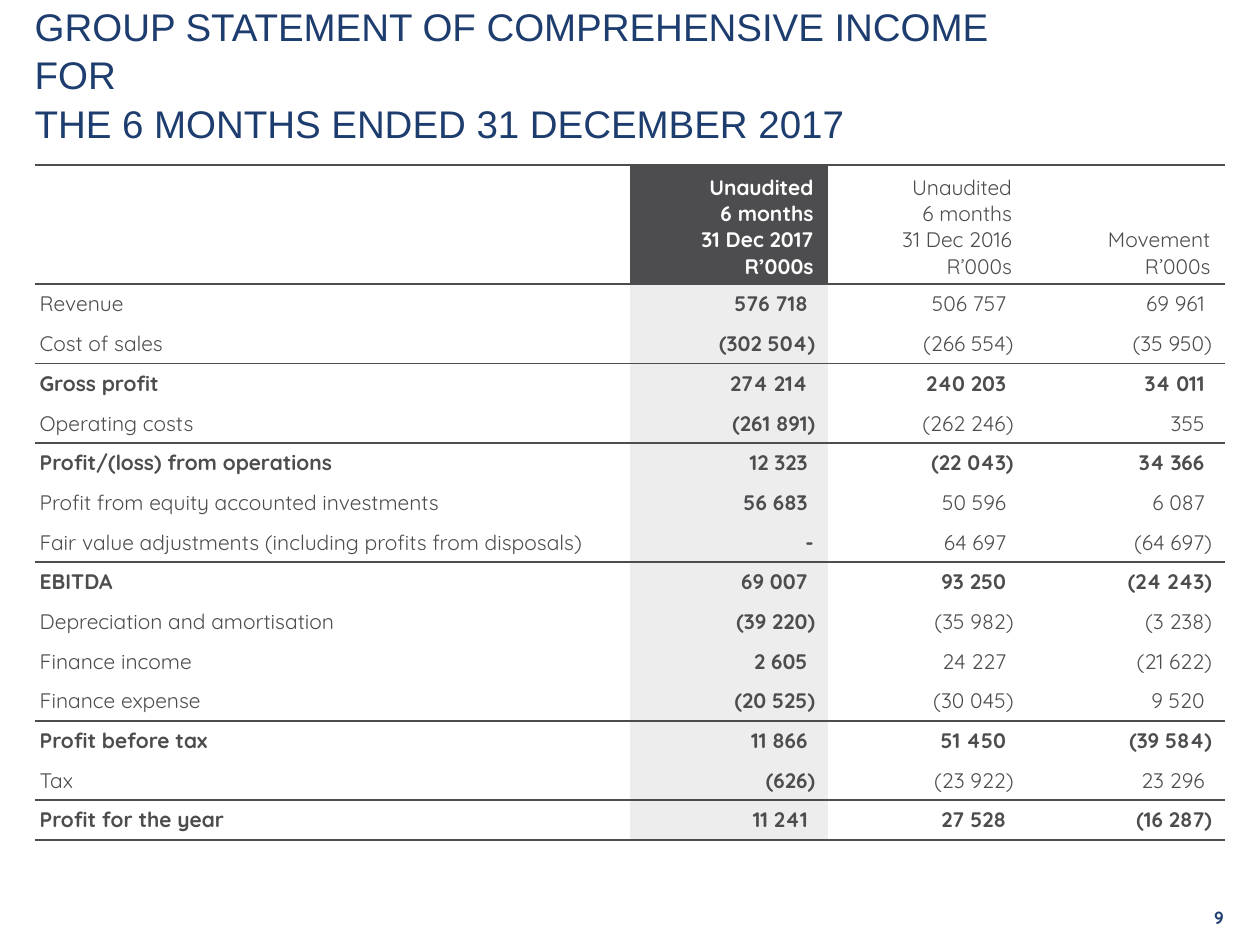
from lxml.etree import SubElement as Sub
from pptx import Presentation
from pptx.dml.color import RGBColor as RGB
from pptx.enum.text import MSO_ANCHOR as Anchor, MSO_AUTO_SIZE as Auto, PP_ALIGN as Align
from pptx.oxml.ns import qn
from pptx.util import Cm, Pt

NAVY = RGB(0x1D, 0x3D, 0x6F)
DARK = RGB(0x4D, 0x4D, 0x4F)
PALE = RGB(0xED, 0xED, 0xEE)
WHITE = RGB(0xFF, 0xFF, 0xFF)
PLAIN = "{2D5ABB26-0587-4C30-8999-92F81FD0307C}"  # no style, no grid

TITLE = ("GROUP STATEMENT OF COMPREHENSIVE INCOME FOR\v"
         "THE 6 MONTHS ENDED 31 DECEMBER 2017")
HEADS = ["",
         "Unaudited\v6 months\n31 Dec 2017\nR’000s",
         "Unaudited\v6 months\n31 Dec 2016\nR’000s",
         "Movement\nR’000s"]
ROWS = [
    ("Revenue", "576 718", "506 757", "69 961"),
    ("Cost of sales", "(302 504)", "(266 554)", "(35 950)"),
    ("Gross profit", "274 214", "240 203", "34 011"),
    ("Operating costs", "(261 891)", "(262 246)", "355"),
    ("Profit/(loss) from operations", "12 323", "(22 043)", "34 366"),
    ("Profit from equity accounted investments", "56 683", "50 596", "6 087"),
    ("Fair value adjustments (including profits from disposals)",
     "-", "64 697", "(64 697)"),
    ("EBITDA", "69 007", "93 250", "(24 243)"),
    ("Depreciation and amortisation", "(39 220)", "(35 982)", "(3 238)"),
    ("Finance income", "2 605", "24 227", "(21 622)"),
    ("Finance expense", "(20 525)", "(30 045)", "9 520"),
    ("Profit before tax", "11 866", "51 450", "(39 584)"),
    ("Tax", "(626)", "(23 922)", "23 296"),
    ("Profit for the year", "11 241", "27 528", "(16 287)"),
]
TOTALS = {"Gross profit", "Profit/(loss) from operations", "EBITDA",
          "Profit before tax", "Profit for the year"}


def write(frame, text, font="Quicksand", size=12, color=DARK, bold=False,
          align=Align.LEFT, space=None):
    """Fill a text frame; each line of text is a paragraph."""
    frame.text = text
    for para in frame.paragraphs:
        para.alignment = align
        para.line_spacing = space
        for run in para.runs:
            style = run.font
            style.name, style.size, style.bold = font, Pt(size), bold
            style.color.rgb = color


def rule(cell, side):
    """Draw a border on the top (T) or bottom (B) of a cell."""
    line = Sub(cell._tc.get_or_add_tcPr(), qn(f"a:ln{side}"), w=str(Pt(1)))
    Sub(Sub(line, qn("a:solidFill")), qn("a:srgbClr"), val=str(DARK))


class Deck:
    def __init__(self):
        self.prs = Presentation()
        self.prs.slide_width, self.prs.slide_height = Cm(25.4), Cm(19.05)
        self.slide = self.prs.slides.add_slide(self.prs.slide_layouts[5])

    def box(self, shape, text, anchor, **style):
        frame = shape.text_frame
        frame.word_wrap, frame.auto_size = True, Auto.NONE
        frame.vertical_anchor = anchor
        frame.margin_left = frame.margin_right = 0
        frame.margin_top = frame.margin_bottom = 0
        write(frame, text, **style)

    def title(self, text):
        shape = self.slide.shapes.title
        shape.left, shape.top = Cm(0.7), Cm(0.74)
        shape.width, shape.height = Cm(20.4), Cm(2.2)
        self.box(shape, text, Anchor.BOTTOM, font="Arial", size=22,
                 color=NAVY, space=1.05)

    def number(self, text):
        shape = self.slide.shapes.add_textbox(Cm(23.47), Cm(17.93), Cm(1.2), Cm(1.12))
        self.box(shape, text, Anchor.MIDDLE, size=10, color=NAVY, bold=True,
                 align=Align.RIGHT)

    def cell(self, cell, text, fill=None, sides="", left=0, right=0, bottom=0,
             anchor=Anchor.MIDDLE, **style):
        cell.margin_left, cell.margin_right = Cm(left), Cm(right)
        cell.margin_top, cell.margin_bottom = 0, Cm(bottom)
        cell.vertical_anchor = anchor
        for side in sides:
            rule(cell, side)
        if fill is None:
            cell.fill.background()
        else:
            cell.fill.solid()
            cell.fill.fore_color.rgb = fill
        write(cell.text_frame, text, **style)

    def table(self, heads, rows):
        grid = self.slide.shapes.add_table(
            len(rows) + 1, len(heads), Cm(0.7), Cm(3.33), Cm(24), Cm(13.6)).table
        grid.first_row = grid.horz_banding = False
        grid._tbl.tblPr.find(qn("a:tableStyleId")).text = PLAIN
        for col, width in zip(grid.columns, (12, 4, 4, 4)):
            col.width = Cm(width)
        for row in grid.rows:
            row.height = Cm(0.8)
        grid.rows[0].height = Cm(2.4)

        # Header row, with the current period in reverse
        for c, text in enumerate(heads):
            now = c == 1
            self.cell(grid.cell(0, c), text, fill=DARK if now else None, sides="TB",
                      right=0.3, bottom=0.1, anchor=Anchor.BOTTOM, bold=now,
                      color=WHITE if now else DARK, align=Align.RIGHT)

        # Body: a line closes each group just before its total
        for r, (label, *values) in enumerate(rows, 1):
            total, last = label in TOTALS, r == len(rows)
            ends = last or rows[r][0] in TOTALS
            sides = "TB" if last else "B" if ends else ""
            self.cell(grid.cell(r, 0), label, sides=sides, left=0.1, bold=total)
            for c, value in enumerate(values, 1):
                # The trailing space and smaller margin hang closing brackets
                self.cell(grid.cell(r, c), value if value == "-" else value + " ",
                          fill=PALE if c == 1 else None, sides=sides,
                          right=0.15 if value.endswith(")") else 0.3,
                          bold=total or c == 1, align=Align.RIGHT)


def main():
    deck = Deck()
    deck.number("9")
    deck.title(TITLE)
    deck.table(HEADS, ROWS)
    deck.prs.save("out.pptx")


if __name__ == "__main__":
    main()
